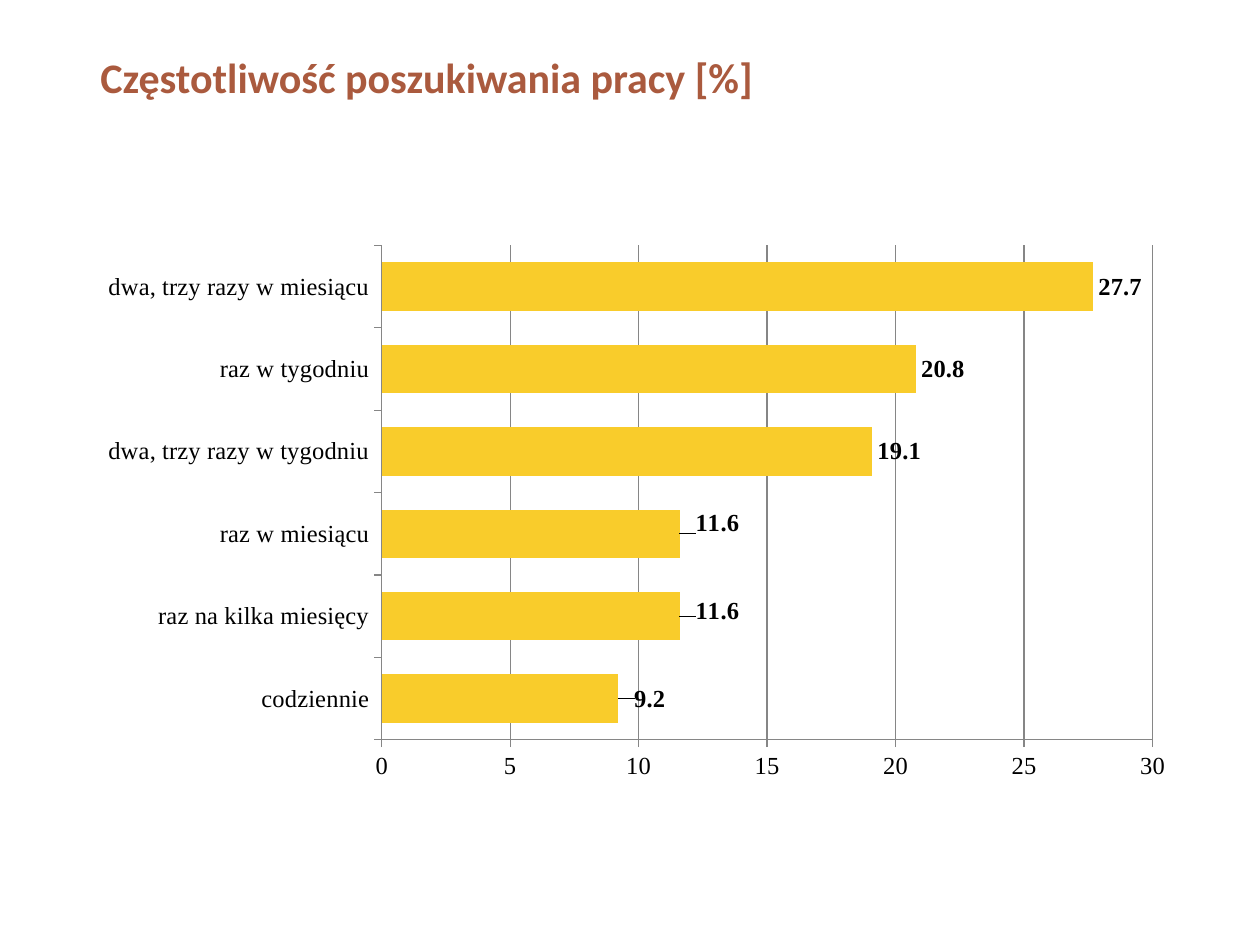
from lxml import etree
from pptx import Presentation
from pptx.chart.data import CategoryChartData
from pptx.dml.color import RGBColor
from pptx.enum.chart import XL_CHART_TYPE, XL_LABEL_POSITION, XL_TICK_MARK
from pptx.enum.text import MSO_ANCHOR, PP_ALIGN
from pptx.oxml.ns import qn
from pptx.util import Inches, Pt

BAR = XL_CHART_TYPE.BAR_CLUSTERED
OUTSIDE_END = XL_LABEL_POSITION.OUTSIDE_END
TICK_OUT = XL_TICK_MARK.OUTSIDE
MIDDLE, CENTER = MSO_ANCHOR.MIDDLE, PP_ALIGN.CENTER

COLORS = {"title": "AA5A3E", "bar": "F9CC2B", "text": "000000", "line": "868686"}
FREQUENCIES = {
    "codziennie": 9.2,
    "raz na kilka miesięcy": 11.6,
    "raz w miesiącu": 11.6,
    "dwa, trzy razy w tygodniu": 19.1,
    "raz w tygodniu": 20.8,
    "dwa, trzy razy w miesiącu": 27.7,
}
# Shift of single labels, as fractions of the chart size
LABEL_SHIFTS = {0: (0.01, 0), 1: (0.01, -0.01), 2: (0.01, -0.02)}


def rgb(name):
    return RGBColor.from_string(COLORS[name])


def set_font(font, name, size, color, bold=False):
    font.name, font.size, font.bold = name, Pt(size), bold
    font.color.rgb = rgb(color)


def fill_layout(layout, **values):
    """Write a manual layout into a c:layout element."""
    for child in list(layout):
        layout.remove(child)
    manual = etree.SubElement(layout, qn("c:manualLayout"))
    for tag, value in values.items():
        etree.SubElement(manual, qn(f"c:{tag}")).set("val", str(value))


def add_title(s, text):
    title = s.shapes.title
    title.left, title.top = Inches(0.12), Inches(0.21)
    title.width, title.height = Inches(6.61), Inches(0.79)
    tf = title.text_frame
    tf.text = text
    tf.vertical_anchor = MIDDLE
    p = tf.paragraphs[0]
    p.alignment = CENTER
    set_font(p.font, "Calibri", 24, "title", True)


def format_axis(axis):
    axis.major_tick_mark = TICK_OUT
    axis.format.line.color.rgb = rgb("line")
    axis.format.line.width = Pt(0.75)


def format_labels(series):
    labels = series.data_labels
    labels.show_value = True
    labels.number_format, labels.number_format_is_linked = "###0.0", False
    labels.position = OUTSIDE_END
    set_font(labels.font, "Times New Roman", 14, "text", True)
    for i, (x, y) in LABEL_SHIFTS.items():
        label = series.points[i].data_label
        label.position = OUTSIDE_END
        set_font(label.font, "Times New Roman", 14, "text", True)
    for idx in series._element.findall(f".//{qn('c:dLbl')}/{qn('c:idx')}"):
        x, y = LABEL_SHIFTS[int(idx.get("val"))]
        layout = etree.Element(qn("c:layout"))
        idx.addnext(layout)
        fill_layout(layout, x=x, y=y)


def add_bar_chart(s):
    data = CategoryChartData()
    data.categories = list(FREQUENCIES)
    data.add_series("Series 1", list(FREQUENCIES.values()))
    chart = s.shapes.add_chart(BAR, Inches(0.67), Inches(1.86),
                               Inches(8.74), Inches(4.41), data).chart
    chart.has_legend = chart.has_title = False
    set_font(chart.font, "Times New Roman", 14, "text")

    format_axis(chart.category_axis)
    values = chart.value_axis
    format_axis(values)
    values.minimum_scale, values.maximum_scale, values.major_unit = 0, 30, 5
    values.tick_labels.number_format = "#,##0"
    values.tick_labels.number_format_is_linked = False
    values.has_major_gridlines = True
    values.major_gridlines.format.line.color.rgb = rgb("line")
    values.major_gridlines.format.line.width = Pt(0.75)

    plot = chart.plots[0]
    plot.gap_width, plot.vary_by_categories = 70, False
    series = plot.series[0]
    series.format.fill.solid()
    series.format.fill.fore_color.rgb = rgb("bar")
    format_labels(series)

    area = chart._chartSpace.find(f".//{qn('c:plotArea')}")
    layout = area.find(qn("c:layout"))
    if layout is None:
        layout = etree.Element(qn("c:layout"))
        area.insert(0, layout)
    fill_layout(layout, layoutTarget="inner", xMode="edge", yMode="edge",
                x=0.27, y=0.02, w=0.7, h=0.89)


def main():
    prs = Presentation()
    prs.slide_width, prs.slide_height = Inches(10), Inches(7.5)
    s = prs.slides.add_slide(prs.slide_layouts[5])
    add_title(s, "Częstotliwość poszukiwania pracy [%] ")
    add_bar_chart(s)
    prs.save("out.pptx")


if __name__ == "__main__":
    main()
